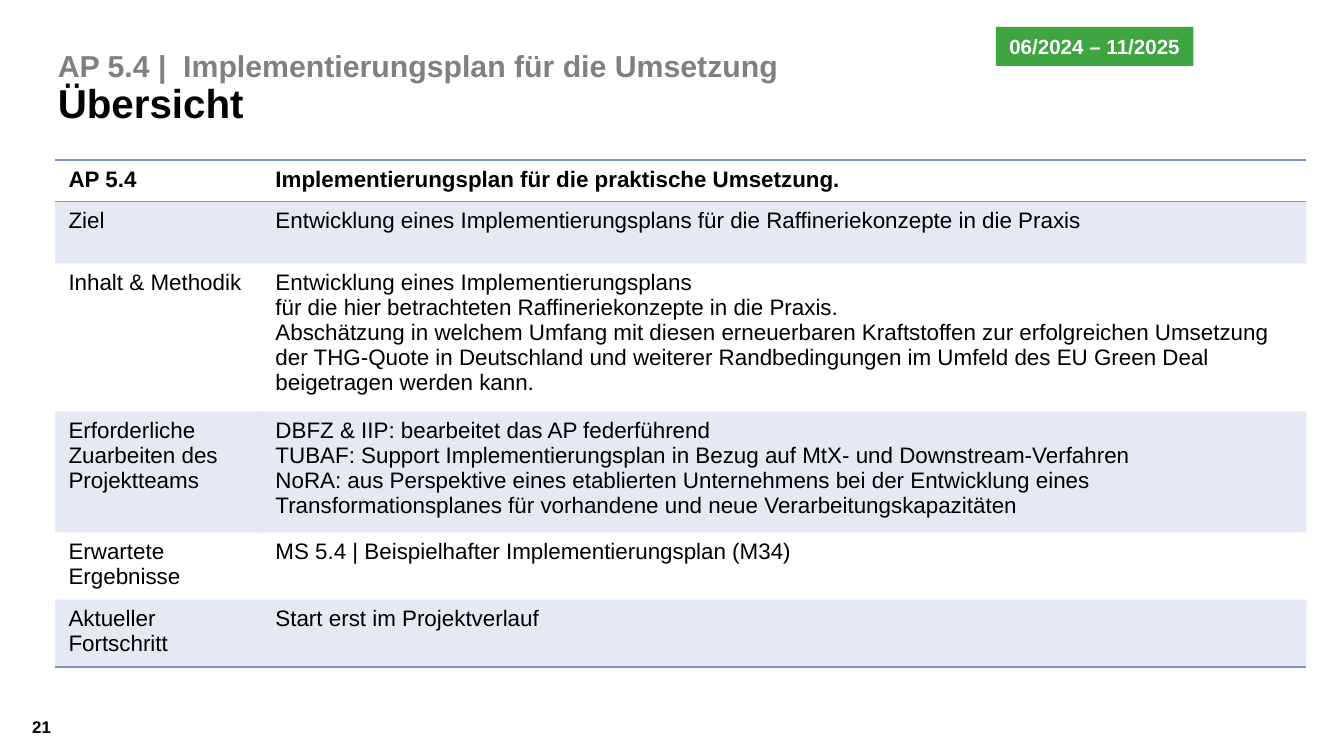
from lxml import etree
from pptx import Presentation
from pptx.dml.color import RGBColor
from pptx.enum.shapes import MSO_SHAPE
from pptx.enum.text import MSO_ANCHOR, PP_ALIGN
from pptx.oxml.ns import qn
from pptx.util import Inches, Pt

RECTANGLE = MSO_SHAPE.RECTANGLE
MIDDLE, BOTTOM = MSO_ANCHOR.MIDDLE, MSO_ANCHOR.BOTTOM
LEFT, CENTER = PP_ALIGN.LEFT, PP_ALIGN.CENTER
TITLE_ONLY = 5
PLAIN_TABLE = "{2D5ABB26-0587-4C30-8999-92F81FD0307C}"

FONT = "Arial"
BLACK, GREY, WHITE = "000000", "808080", "FFFFFF"
BLUE, GREEN = "7D92C3", "3EA540"

WIDTH = 10
HEIGHT = WIDTH * 9 / 16
TITLE = [
    ("AP 5.4 |  Implementierungsplan für die Umsetzung", 16.2, GREY),
    ("Übersicht", 21.6, BLACK),
]
PERIOD = "06/2024 – 11/2025"
PAGE_NUMBER = "21"
TABLE_HEIGHT = 3.77
COLUMNS = [1.54, 7.77]
ROWS = [
    (0.31, "AP 5.4", ["Implementierungsplan für die praktische Umsetzung."]),
    (0.46, "Ziel", [
        "Entwicklung eines Implementierungsplans für die Raffineriekonzepte in die Praxis",
    ]),
    (0.93, "Inhalt & Methodik", [
        "Entwicklung eines Implementierungsplans",
        "für die hier betrachteten Raffineriekonzepte in die Praxis.",
        "Abschätzung in welchem Umfang mit diesen erneuerbaren Kraftstoffen zur "
        "erfolgreichen Umsetzung der THG-Quote in Deutschland und weiterer "
        "Randbedingungen im Umfeld des EU Green Deal beigetragen werden kann.",
    ]),
    (0.83, "Erforderliche Zuarbeiten des Projektteams", [
        "DBFZ & IIP: bearbeitet das AP federführend",
        "TUBAF: Support Implementierungsplan in Bezug auf MtX- und Downstream-Verfahren",
        "NoRA: aus Perspektive eines etablierten Unternehmens bei der Entwicklung eines "
        "Transformationsplanes für vorhandene und neue Verarbeitungskapazitäten",
    ]),
    (0.46, "Erwartete Ergebnisse", ["MS 5.4 | Beispielhafter Implementierungsplan (M34)"]),
    (0.5, "Aktueller Fortschritt", ["Start erst im Projektverlauf"]),
]


def color(value):
    return RGBColor.from_string(value)


def style(span, size, value, bold=True):
    span.font.name = FONT
    span.font.size = Pt(size)
    span.font.bold = bold
    span.font.color.rgb = color(value)


def place(*lengths):
    return [Inches(length) for length in lengths]


def remove_margins(frame):
    frame.margin_left = frame.margin_right = 0
    frame.margin_top = frame.margin_bottom = 0


def add_border(cell, side):
    line = etree.SubElement(cell._tc.get_or_add_tcPr(), qn(f"a:{side}"), w=str(Pt(1)))
    fill = etree.SubElement(line, qn("a:solidFill"))
    etree.SubElement(fill, qn("a:srgbClr"), val=BLUE)


def tint(cell):
    cell.fill.solid()
    cell.fill.fore_color.rgb = color(BLUE)
    shade = cell._tc.tcPr.find(qn("a:solidFill"))[0]
    etree.SubElement(shade, qn("a:alpha"), val="20000")


def add_title(page):
    title = page.shapes.title
    title.left, title.top, title.width, title.height = place(0.43, 0.32, 8.47, 0.63)
    frame = title.text_frame
    remove_margins(frame)
    frame.word_wrap = True
    frame.vertical_anchor = BOTTOM
    frame.text = "\v".join(text for text, _, _ in TITLE)
    para = frame.paragraphs[0]
    para.alignment = LEFT
    para.line_spacing = 0.9
    for span, (_, size, value) in zip(para.runs, TITLE):
        style(span, size, value)


def add_overview(page):
    holder = page.shapes.add_table(
        len(ROWS), len(COLUMNS), *place(0.41, 1.19, sum(COLUMNS), TABLE_HEIGHT))
    table = holder.table
    table.first_row = table.horz_banding = False
    table._tbl.tblPr.find(qn("a:tableStyleId")).text = PLAIN_TABLE
    for column, width in zip(table.columns, COLUMNS):
        column.width = Inches(width)
    for index, (height, label, lines) in enumerate(ROWS):
        table.rows[index].height = Inches(height)
        for cell, text in zip(table.rows[index].cells, (label, "\n".join(lines))):
            cell.text = text
            for para in cell.text_frame.paragraphs:
                for span in para.runs:
                    style(span, 12, BLACK, bold=index == 0)
            if index == 0:
                add_border(cell, "lnT")
            if index in (0, len(ROWS) - 1):
                add_border(cell, "lnB")
            if index % 2:
                tint(cell)
            else:
                cell.fill.background()
    holder.height = Inches(TABLE_HEIGHT)


def add_period(page):
    badge = page.shapes.add_shape(RECTANGLE, *place(7.41, 0.2, 1.47, 0.29))
    badge.shadow.inherit = False
    badge.fill.solid()
    badge.fill.fore_color.rgb = color(GREEN)
    badge.line.fill.background()
    frame = badge.text_frame
    frame.word_wrap = False
    frame.vertical_anchor = MIDDLE
    frame.text = PERIOD
    frame.paragraphs[0].alignment = CENTER
    style(frame.paragraphs[0].runs[0], 11, WHITE)


def add_page_number(page):
    box = page.shapes.add_textbox(*place(0.24, 5.19, 0.36, 0.43))
    frame = box.text_frame
    remove_margins(frame)
    frame.word_wrap = True
    frame.vertical_anchor = MIDDLE
    frame.text = PAGE_NUMBER
    style(frame.paragraphs[0].runs[0], 9, BLACK)


def main():
    deck = Presentation()
    deck.slide_width, deck.slide_height = place(WIDTH, HEIGHT)
    page = deck.slides.add_slide(deck.slide_layouts[TITLE_ONLY])
    add_page_number(page)
    add_title(page)
    add_overview(page)
    add_period(page)
    deck.save("out.pptx")


if __name__ == "__main__":
    main()
